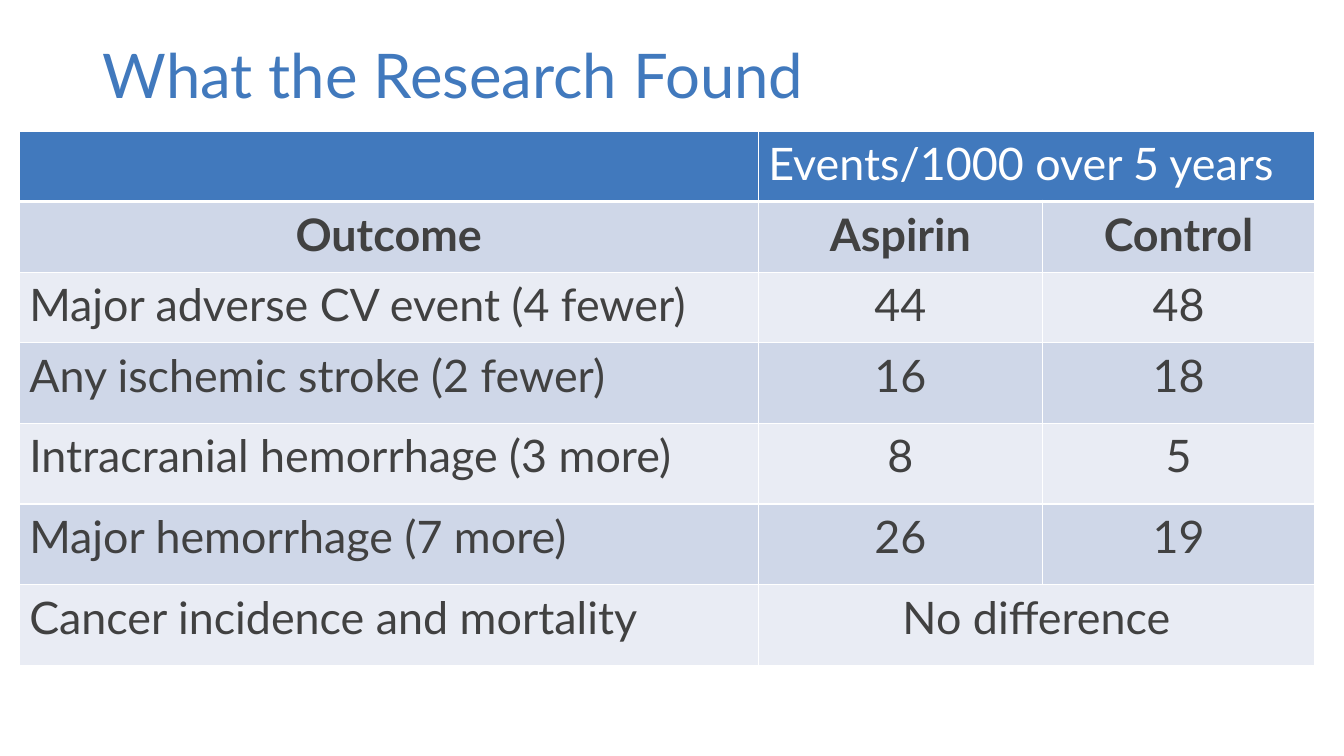
import pptx
import pptx.dml.color
import pptx.enum.text
import pptx.oxml
import pptx.oxml.ns
import pptx.util
from pptx.util import Inches

COLORS = {
    "blue": "4179BD",
    "white": "FFFFFF",
    "text": "414141",
    "band_dark": "CFD7E8",
    "band_light": "E9ECF4",
}
FONT = "Lato"

OUTCOMES = [
    ("", "Events/1000 over 5 years", None),
    ("Outcome", "Aspirin", "Control"),
    ("Major adverse CV event (4 fewer)", "44", "48"),
    ("Any ischemic stroke (2 fewer)", "16", "18"),
    ("Intracranial hemorrhage (3 more)", "8", "5"),
    ("Major hemorrhage (7 more)", "26", "19"),
    ("Cancer incidence and mortality", "No difference", None),
]
COLUMN_WIDTHS = [7.33, 2.82, 2.7]
ROW_HEIGHTS = [0.7] * 3 + [0.8] * 4


def rgb(name):
    return pptx.dml.color.RGBColor.from_string(COLORS[name])


def write_text(text_frame, text, size=32, color="text", bold=False,
               centered=False, line_spacing=None):
    paragraph = text_frame.paragraphs[0]
    if centered:
        paragraph.alignment = pptx.enum.text.PP_ALIGN.CENTER
    if line_spacing:
        paragraph.line_spacing = line_spacing
    font = paragraph.font
    if text:
        run = paragraph.add_run()
        run.text = text
        font = run.font
    font.name = FONT
    font.size = pptx.util.Pt(size)
    font.bold = bold
    font.color.rgb = rgb(color)


class SlideBuilder:
    def __init__(self, presentation):
        self.slide = presentation.slides.add_slide(presentation.slide_layouts[6])

    def add_title(self, text, left, top, width, height):
        shape = self.slide.shapes.add_textbox(
            Inches(left), Inches(top), Inches(width), Inches(height))
        shape.text_frame.word_wrap = True
        write_text(shape.text_frame, text, size=44, color="blue", line_spacing=0.9)

    def style_cell(self, cell, fill, bottom_width):
        # Borders must precede the fill in the cell properties
        properties = cell._tc.get_or_add_tcPr()
        for side, width in (("L", 1), ("R", 1), ("T", 1), ("B", bottom_width)):
            properties.append(pptx.oxml.parse_xml(
                f'<a:ln{side} {pptx.oxml.ns.nsdecls("a")} w="{pptx.util.Pt(width)}">'
                f'<a:solidFill><a:srgbClr val="{COLORS["white"]}"/></a:solidFill>'
                f'</a:ln{side}>'))
        cell.fill.solid()
        cell.fill.fore_color.rgb = rgb(fill)

    def add_table(self, rows, left, top, column_widths, row_heights):
        table = self.slide.shapes.add_table(
            len(rows), len(column_widths), Inches(left), Inches(top),
            Inches(sum(column_widths)), Inches(sum(row_heights))).table
        for column, width in zip(table.columns, column_widths):
            column.width = Inches(width)
        for row, height in zip(table.rows, row_heights):
            row.height = Inches(height)

        for row_index, values in enumerate(rows):
            is_header = row_index == 0
            is_subheader = row_index == 1
            band = "band_dark" if row_index % 2 else "band_light"
            for column_index, value in enumerate(values):
                cell = table.cell(row_index, column_index)
                self.style_cell(cell, "blue" if is_header else band,
                                3 if is_header else 1)
                # A missing value extends the cell on its left
                if value is None:
                    table.cell(row_index, column_index - 1).merge(cell)
                    continue
                write_text(
                    cell.text_frame, value,
                    color="white" if is_header else "text",
                    bold=is_subheader,
                    centered=is_subheader or (column_index > 0 and not is_header))


def main():
    presentation = pptx.Presentation()
    presentation.slide_width = Inches(13.33)
    presentation.slide_height = Inches(7.5)
    builder = SlideBuilder(presentation)

    # Title
    builder.add_title("What the Research Found", 0.92, 0.4, 11.5, 0.9)

    # Outcomes table
    builder.add_table(OUTCOMES, 0.19, 1.3, COLUMN_WIDTHS, ROW_HEIGHTS)

    presentation.save("out.pptx")


if __name__ == "__main__":
    main()
